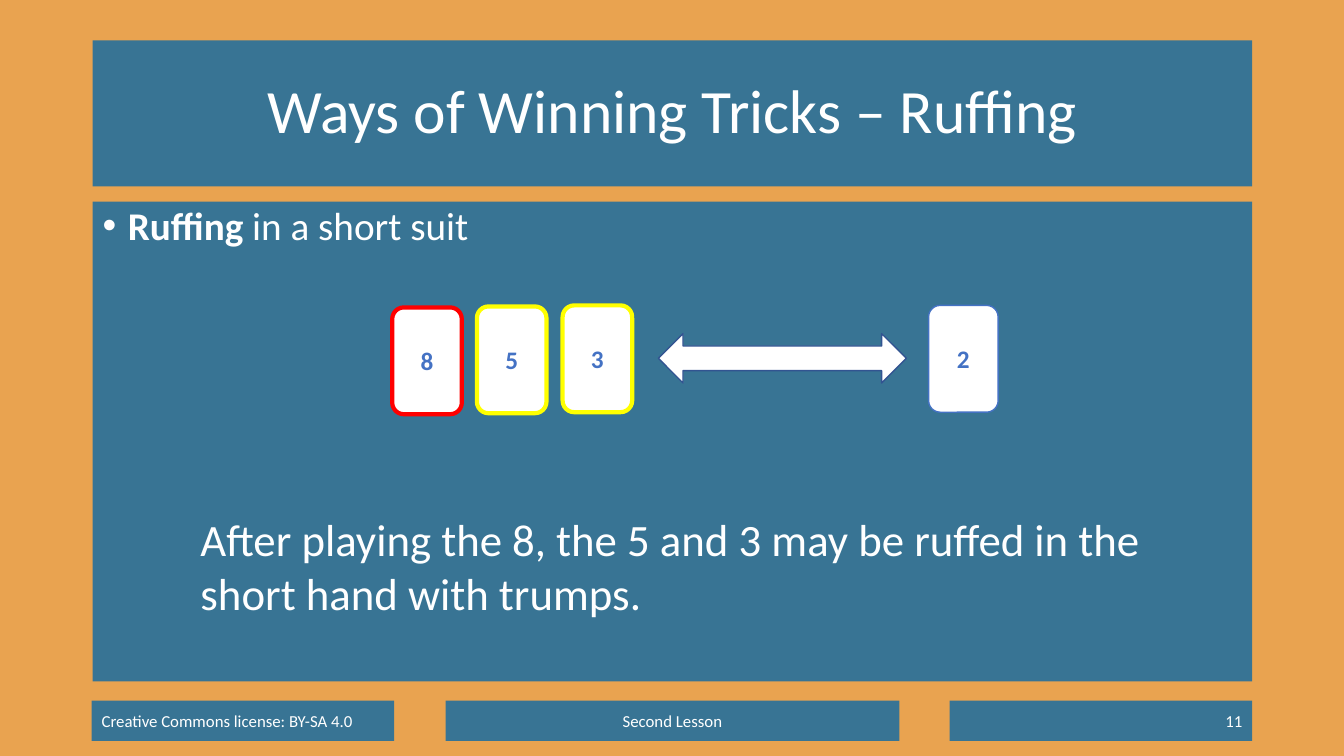
"""Build the bridge lesson slide on winning tricks by ruffing."""
from dataclasses import dataclass

from lxml import etree
from pptx import Presentation, util as u
from pptx.dml.color import RGBColor
from pptx.enum import shapes, text
from pptx.oxml import ns

ORANGE = RGBColor(0xE9, 0xA3, 0x50)
TEAL = RGBColor(0x38, 0x74, 0x94)
WHITE = RGBColor(0xFF, 0xFF, 0xFF)
RED = RGBColor(0xFF, 0x00, 0x00)
YELLOW = RGBColor(0xFF, 0xFF, 0x00)
BLUE = RGBColor(0x44, 0x72, 0xC4)
NAVY = RGBColor(0x32, 0x54, 0x91)
FONT = "Calibri"
CARD_W, CARD_H = 0.69, 1.06
RECT = shapes.MSO_SHAPE.RECTANGLE
CARD = shapes.MSO_SHAPE.ROUNDED_RECTANGLE
ARROW = shapes.MSO_SHAPE.LEFT_RIGHT_ARROW
LEFT, CENTER, RIGHT = text.PP_ALIGN.LEFT, text.PP_ALIGN.CENTER, text.PP_ALIGN.RIGHT
TOP, MIDDLE = text.MSO_ANCHOR.TOP, text.MSO_ANCHOR.MIDDLE


@dataclass
class Run:
    words: str
    size: float
    bold: bool = False
    color: RGBColor = WHITE


@dataclass
class Panel:
    left: float
    top: float
    width: float
    height: float
    runs: list[Run]
    align: text.PP_ALIGN = LEFT
    anchor: text.MSO_ANCHOR = MIDDLE
    spacing: float = 1.0
    bullet: bool = False


@dataclass
class Card:
    rank: str
    left: float
    top: float
    color: RGBColor
    weight: float = 3


PANELS = [
    Panel(0.92, 0.4, 11.5, 1.45, [Run("Ways of Winning Tricks – Ruffing", 44)],
          CENTER, spacing=0.9),
    Panel(0.92, 2, 11.5, 4.76,
          [Run("Ruffing", 28, True), Run(" in a short suit", 28)],
          anchor=TOP, spacing=0.9, bullet=True),
    Panel(0.91, 6.95, 3, 0.4, [Run("Creative Commons license: BY-SA 4.0", 12)]),
    Panel(4.42, 6.95, 4.5, 0.4, [Run("Second Lesson", 12)], CENTER),
    Panel(9.42, 6.95, 3, 0.4, [Run("11", 12)], RIGHT),
]
CARDS = [
    Card("8", 3.89, 3.05, RED),
    Card("5", 4.73, 3.04, YELLOW),
    Card("3", 5.58, 3.03, YELLOW),
    Card("2", 9.21, 3.03, BLUE, 1),
]


def add_runs(p, runs: list[Run]) -> None:
    """Add styled runs to a paragraph."""
    for run in runs:
        r = p.add_run()
        r.text = run.words
        r.font.name = FONT
        r.font.size = u.Pt(run.size)
        r.font.bold = run.bold
        r.font.color.rgb = run.color


def add_bullet(p) -> None:
    """Give a paragraph a hanging round bullet."""
    p.space_before = u.Pt(10)
    props = p._p.get_or_add_pPr()
    props.set("marL", str(u.Inches(0.25)))
    props.set("indent", str(u.Inches(-0.25)))
    etree.SubElement(props, ns.qn("a:buFont"), typeface="Arial")
    etree.SubElement(props, ns.qn("a:buChar"), char="•")


def add_box(s, kind: shapes.MSO_SHAPE, left: float, top: float, width: float,
            height: float, fill: RGBColor):
    """Add a filled preset shape without shadow or outline."""
    sp = s.shapes.add_shape(kind, u.Inches(left), u.Inches(top),
                            u.Inches(width), u.Inches(height))
    sp.shadow.inherit = False
    sp.fill.solid()
    sp.fill.fore_color.rgb = fill
    sp.line.fill.background()
    return sp


def set_line(sp, color: RGBColor, weight: float) -> None:
    """Outline a shape."""
    sp.line.color.rgb = color
    sp.line.width = u.Pt(weight)


def draw_panel(s, panel: Panel) -> None:
    """Draw a teal panel with its text."""
    sp = add_box(s, RECT, panel.left, panel.top, panel.width, panel.height, TEAL)
    tf = sp.text_frame
    tf.word_wrap = True
    tf.vertical_anchor = panel.anchor
    p = tf.paragraphs[0]
    p.alignment = panel.align
    p.line_spacing = panel.spacing
    if panel.bullet:
        add_bullet(p)
    add_runs(p, panel.runs)


def draw_card(s, card: Card) -> None:
    """Draw a playing card with its rank."""
    sp = add_box(s, CARD, card.left, card.top, CARD_W, CARD_H, WHITE)
    set_line(sp, card.color, card.weight)
    tf = sp.text_frame
    tf.vertical_anchor = MIDDLE
    p = tf.paragraphs[0]
    p.alignment = CENTER
    add_runs(p, [Run(card.rank, 18, True, BLUE)])


def main() -> None:
    """Build and save the slide."""
    prs = Presentation()
    prs.slide_width, prs.slide_height = u.Inches(13.33), u.Inches(7.5)
    s = prs.slides.add_slide(prs.slide_layouts[6])
    s.background.fill.solid()
    s.background.fill.fore_color.rgb = ORANGE
    for panel in PANELS:
        draw_panel(s, panel)
    for card in CARDS:
        draw_card(s, card)
    set_line(add_box(s, ARROW, 6.53, 3.31, 2.46, 0.49, WHITE), NAVY, 1)
    note = s.shapes.add_textbox(u.Inches(1.89), u.Inches(5.03),
                                u.Inches(10), u.Inches(1.18))
    tf = note.text_frame
    tf.word_wrap = True
    tf.auto_size = text.MSO_AUTO_SIZE.SHAPE_TO_FIT_TEXT
    add_runs(tf.paragraphs[0], [Run(
        "After playing the 8, the 5 and 3 may be ruffed in the "
        "short hand with trumps.", 32)])
    prs.save("out.pptx")


if __name__ == "__main__":
    main()
